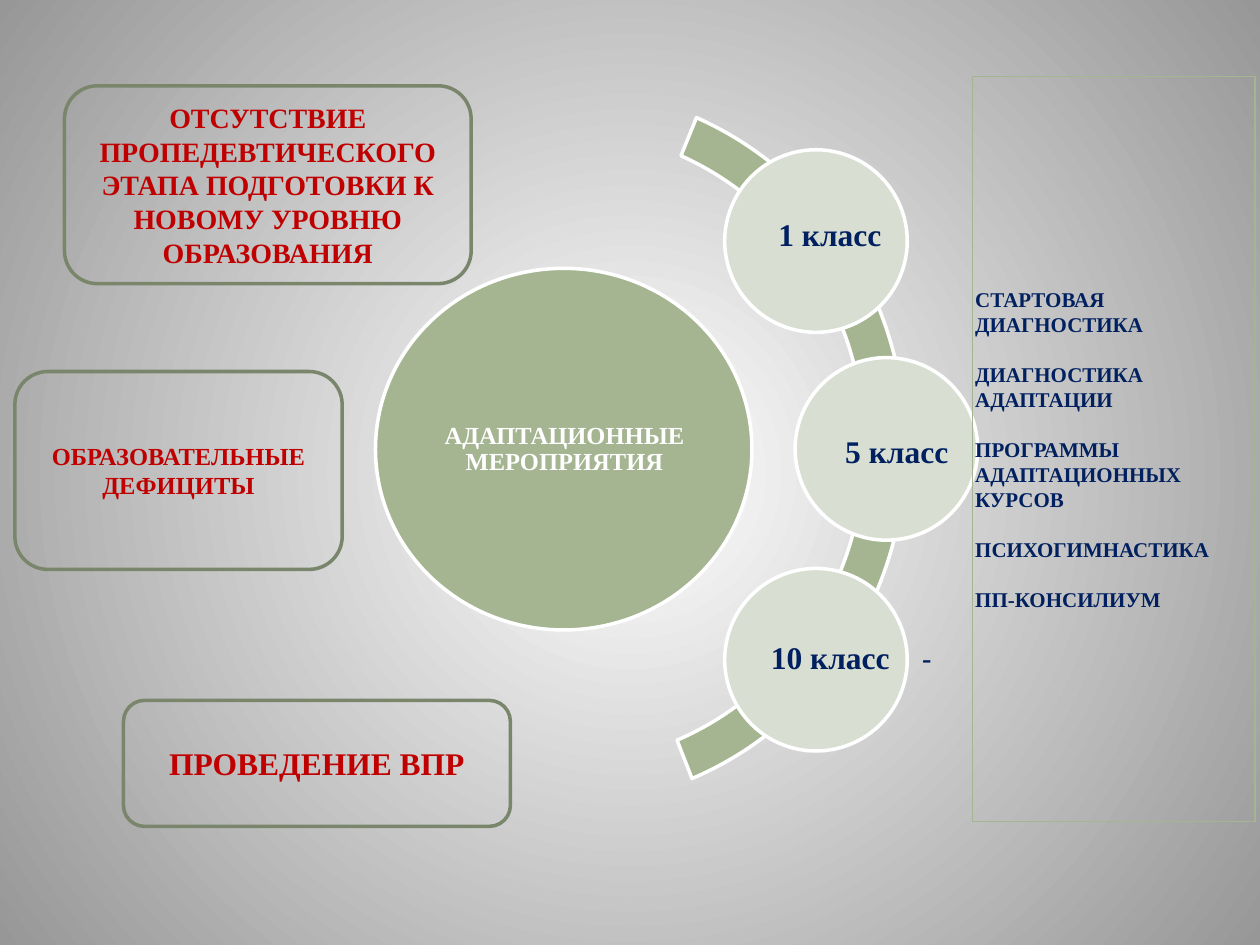
from lxml.etree import SubElement
from pptx import Presentation
from pptx.dml.color import RGBColor
from pptx.enum.shapes import MSO_SHAPE as Kind
from pptx.enum.text import MSO_ANCHOR as Anchor, MSO_AUTO_SIZE as Fit, PP_ALIGN as Align
from pptx.oxml.ns import qn
from pptx.util import Cm, Pt

# Content: boxes are left, top, width, height in cm
HUB = "АДАПТАЦИОННЫЕ МЕРОПРИЯТИЯ"
STEPS = ["СТАРТОВАЯ ДИАГНОСТИКА", "ДИАГНОСТИКА АДАПТАЦИИ",
         "ПРОГРАММЫ АДАПТАЦИОННЫХ КУРСОВ", "ПСИХОГИМНАСТИКА",
         "ПП-КОНСИЛИУМ"]
GRADES = [  # text, circle left and top, label box
    ("1 класс", (14.61, 3.02), (15.44, 4.22, 2.62, 1.02)),
    ("5 класс", (16.03, 7.21), (16.79, 8.59, 2.62, 1.02)),
    ("10 класс", (14.61, 11.46), (15.29, 12.73, 2.95, 1.02)),
]
CAUSES = [  # text, size, box
    ("ОТСУТСТВИЕ ПРОПЕДЕВТИЧЕСКОГО ЭТАПА ПОДГОТОВКИ К НОВОМУ УРОВНЮ ОБРАЗОВАНИЯ",
     16, (1.3, 1.73, 8.2, 3.99)),
    ("ОБРАЗОВАТЕЛЬНЫЕ ДЕФИЦИТЫ", 14, (0.3, 7.49, 6.6, 3.99)),
    ("ПРОВЕДЕНИЕ ВПР", 18, (2.49, 14.12, 7.8, 2.54)),
]

GREEN, PALE, MOSS = "A5B592", "D8DED2", "7A866C"
WHITE, GRAY, NAVY, RED = "FFFFFF", "979797", "002060", "C00000"
DISC = 3.68
SIDES = ("left", "right", "top", "bottom")
TIGHT = {f"margin_{side}": Cm(0.05) for side in SIDES}
MID = {"word_wrap": True, "vertical_anchor": Anchor.MIDDLE}
FREE = {"word_wrap": False, "auto_size": Fit.SHAPE_TO_FIT_TEXT}


def tint(color, code):
    color.rgb = RGBColor.from_string(code)


def put(obj, vals):
    for name, val in vals.items():
        setattr(obj, name, val)


def draw(kind, box, fill, edge, width=2):
    shape = slide.shapes.add_shape(kind, *map(Cm, box))
    shape.shadow.inherit = False
    if fill:
        shape.fill.solid()
        tint(shape.fill.fore_color, fill)
    else:
        shape.fill.background()
    tint(shape.line.color, edge)
    shape.line.width = Pt(width)
    return shape


def write(shape, lines, size, code, frame, para, gap=0):
    text = shape.text_frame
    put(text, frame)
    for num, line in enumerate(lines):
        item = text.add_paragraph() if num else text.paragraphs[0]
        put(item, para)
        if num and gap:
            item.space_before = Pt(gap)
        run = item.add_run()
        run.text = line
        put(run.font, {"name": "Times New Roman", "size": Pt(size), "bold": True})
        tint(run.font.color, code)


def label(box, *args):
    write(slide.shapes.add_textbox(*map(Cm, box)), *args)


deck = Presentation()
put(deck, {"slide_width": Cm(25.4), "slide_height": Cm(19.05)})
slide = deck.slides.add_slide(deck.slide_layouts[6])

# Radial background, light in the centre
back = slide.background.fill
back.gradient()
for stop, code in zip(back.gradient_stops, (WHITE, GRAY)):
    tint(stop.color, code)
grad = slide.element.find(".//" + qn("a:gradFill"))
grad.remove(grad.find(qn("a:lin")))
ring = SubElement(grad, qn("a:path"), {"path": "circle"})
SubElement(ring, qn("a:fillToRect"), {side[0]: "50000" for side in SIDES})

# Hub and arc
draw(Kind.OVAL, (7.57, 5.41, 7.59, 7.29), GREEN, WHITE)
label((8.69, 6.48, 5.38, 5.16), [HUB], 14, WHITE, MID | TIGHT,
      {"alignment": Align.CENTER, "line_spacing": 0.9})
arc = draw(Kind.BLOCK_ARC, (4.42, 1.8, 13.84, 14.43), GREEN, WHITE)
for num, val in enumerate((175.28, 41.19, 0.06)):
    arc.adjustments[num] = val

# Grade circles, with the list of steps over them
for _, spot, _ in GRADES:
    draw(Kind.OVAL, (*spot, DISC, DISC), PALE, WHITE)
panel = draw(Kind.RECTANGLE, (19.61, 1.55, 5.69, 15.01), None, GREEN, 0.75)
write(panel, STEPS, 12, NAVY, MID | TIGHT, {"alignment": Align.JUSTIFY}, 14)
label((18.54, 13.21, 4.93, 0.18), ["-"], 16, NAVY, MID | TIGHT,
      {"line_spacing": 0.9})
for name, _, box in GRADES:
    label(box, [name], 18, NAVY, FREE, {})

# Causes on the left
for name, size, box in CAUSES:
    card = draw(Kind.ROUNDED_RECTANGLE, box, None, MOSS)
    write(card, [name], size, RED, MID, {"alignment": Align.CENTER})

deck.save("out.pptx")
